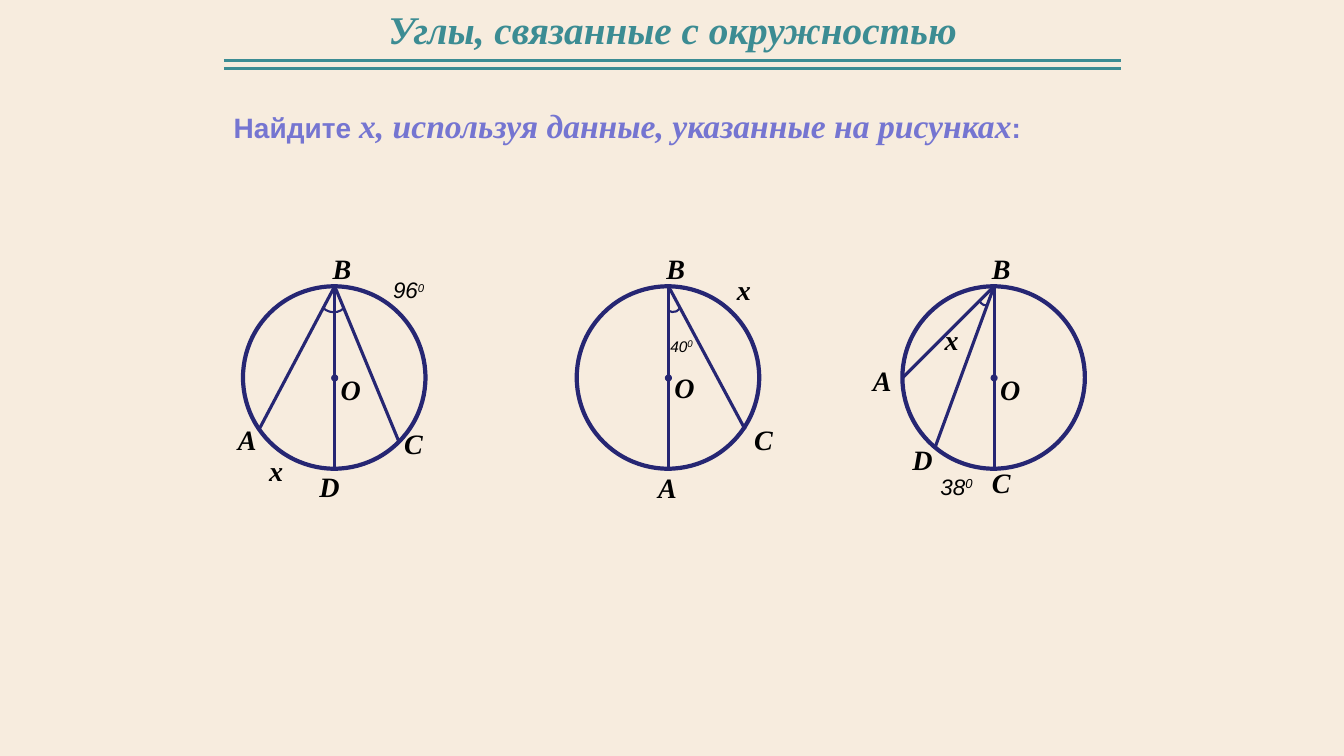
from dataclasses import dataclass

from lxml import etree
from pptx import Presentation
from pptx import util as u
from pptx.dml.color import RGBColor
from pptx.enum import shapes, text
from pptx.oxml import ns

PX = 9144
CIRCLE_TOP, DIAMETER, DOT = 284, 181, 6
APEX = (91, 0)


@dataclass(frozen=True)
class Theme:
    """Colours, fonts and type sizes of the slide."""
    paper: RGBColor = RGBColor(0xF7, 0xEC, 0xDE)
    teal: RGBColor = RGBColor(0x3C, 0x8C, 0x93)
    violet: RGBColor = RGBColor(0x75, 0x75, 0xD1)
    navy: RGBColor = RGBColor(0x26, 0x26, 0x73)
    ink: RGBColor = RGBColor(0, 0, 0)
    serif: str = "Times New Roman"
    sans: str = "Arial"
    title: int = 28
    task: int = 24
    label: int = 20
    degree: int = 16
    small_degree: int = 11


THEME = Theme()


@dataclass(frozen=True)
class Figure:
    """One circle drawing, with offsets from the circle's frame."""
    left: int
    chords: list
    arc: tuple
    turn: float
    labels: list
    degrees: tuple


FIGURES = [
    Figure(241, [(91, 182), (155, 155), (16, 142)], (75, -4, 29, 30), 135.1,
           [("B", 79, -39, 55), ("O", 87, 81, 55), ("A", -15, 130, 55),
            ("x", 16, 161, 32), ("С", 150, 134, 55), ("D", 66, 177, 55)],
           ("96", 139, -15, 37, THEME.degree, 14)),
    Figure(572, [(91, 182), (167, 142)], (87, 9, 16, 17), 124.1,
           [("B", 79, -39, 55), ("O", 87, 79, 55), ("A", 71, 178, 55),
            ("x", 149, -19, 32), ("С", 166, 130, 55)],
           ("40", 83, 44, 30, THEME.small_degree, 12)),
    Figure(895, [(91, 182), (32, 161), (0, 91)], (76, 5, 11, 14), 163.4,
           [("B", 79, -39, 55), ("O", 87, 81, 55), ("A", -39, 72, 55),
            ("x", 32, 31, 32), ("С", 79, 173, 55), ("D", 0, 150, 32)],
           ("38", 28, 180, 37, THEME.degree, THEME.degree)),
]


def px(*lengths):
    """Turn px lengths into EMU."""
    return [length * PX for length in lengths]


def style_font(font, name, size, colour, bold=True, italic=True):
    """Set every visible trait of a font."""
    font.name, font.size = name, u.Pt(size)
    font.bold, font.italic = bold, italic
    font.color.rgb = colour


def add_box(page, left, top, width, height):
    """Add a wrapping text box and return its first paragraph."""
    frame = page.shapes.add_textbox(*px(left, top, width, height)).text_frame
    frame.word_wrap = True
    frame.auto_size = text.MSO_AUTO_SIZE.SHAPE_TO_FIT_TEXT
    return frame.paragraphs[0]


def add_span(para, words):
    """Append a run of text."""
    span = para.add_run()
    span.text = words
    return span


def add_line(page, start, end, colour):
    """Draw a straight line without a shadow."""
    line = page.shapes.add_connector(
        shapes.MSO_CONNECTOR.STRAIGHT, *px(*start, *end))
    line.line.color.rgb = colour
    line.line.width = u.Pt(2.25)
    etree.SubElement(line._element.spPr, ns.qn("a:effectLst"))


def add_outline(parent, kind, frame, weight, filled=False):
    """Draw a navy preset shape, hollow unless filled."""
    shape = parent.shapes.add_shape(kind, *px(*frame))
    shape.shadow.inherit = False
    if filled:
        shape.fill.solid()
        shape.fill.fore_color.rgb = THEME.navy
    else:
        shape.fill.background()
    shape.line.color.rgb = THEME.navy
    shape.line.width = u.Pt(weight)
    return shape


def add_circle(page, left):
    """Draw a circle grouped with its centre dot."""
    group = page.shapes.add_group_shape()
    oval = shapes.MSO_SHAPE.OVAL
    add_outline(group, oval, (left, CIRCLE_TOP, DIAMETER, DIAMETER), 3)
    inset = (DIAMETER + 1 - DOT) // 2
    add_outline(group, oval, (left + inset, CIRCLE_TOP + inset, DOT, DOT),
                0.75, filled=True)


def add_label(page, letter, left, top, width):
    """Write the letter of a point or unknown."""
    para = add_box(page, left, top, width, 44)
    para.space_before = u.Pt(2)
    style_font(para.font, THEME.serif, THEME.label, THEME.ink)
    add_span(para, letter)


def add_degrees(page, value, left, top, height, size, raised_size):
    """Write an angle with a raised zero as its degree sign."""
    para = add_box(page, left, top, 74, height)
    style_font(para.font, THEME.sans, size, THEME.ink, bold=False)
    add_span(para, value)
    zero = add_span(para, "0")
    zero.font.size = u.Pt(raised_size)
    zero.font._element.set("baseline", "30000")


def add_figure(page, figure):
    """Draw one circle with its chords, angle arc and labels."""
    def place(x, y):
        return figure.left + x, CIRCLE_TOP + y

    add_circle(page, figure.left)
    for chord in figure.chords:
        add_line(page, place(*chord), place(*APEX), THEME.navy)
    x, y, width, height = figure.arc
    arc = add_outline(page, shapes.MSO_SHAPE.ARC,
                      (*place(x, y), width, height), 1.5)
    arc.rotation = figure.turn
    for letter, x, y, width in figure.labels:
        add_label(page, letter, *place(x, y), width)
    value, x, y, *sizes = figure.degrees
    add_degrees(page, value, *place(x, y), *sizes)


def add_heading(page):
    """Fill the title and rule a double line beneath it."""
    title = page.shapes.title
    title.left, title.top, title.width, title.height = px(167, 0, 1000, 57)
    frame = title.text_frame
    frame.vertical_anchor = text.MSO_ANCHOR.MIDDLE
    frame.auto_size = text.MSO_AUTO_SIZE.SHAPE_TO_FIT_TEXT
    para = frame.paragraphs[0]
    para.alignment = text.PP_ALIGN.CENTER
    style_font(para.font, THEME.serif, THEME.title, THEME.teal)
    add_span(para, "Углы, связанные с окружностью")
    for top in (60, 68):
        add_line(page, (222, top), (1112, top), THEME.teal)


def add_task(page):
    """Write the task sentence in its two typefaces."""
    para = add_box(page, 222, 99, 890, 51)
    plain = (THEME.sans, THEME.label, THEME.violet, True, False)
    slanted = (THEME.serif, THEME.task, THEME.violet)
    for words, look in (
            ("Найдите ", plain),
            ("x, используя данные, указанные на рисунках", slanted),
            (":", plain)):
        style_font(add_span(para, words).font, *look)


def main():
    """Build the slide and save it."""
    deck = Presentation()
    deck.slide_width, deck.slide_height = px(1333, 750)
    page = deck.slides.add_slide(deck.slide_layouts.get_by_name("Title Only"))
    page.background.fill.solid()
    page.background.fill.fore_color.rgb = THEME.paper
    add_heading(page)
    add_task(page)
    for figure in FIGURES:
        add_figure(page, figure)
    deck.save("out.pptx")


if __name__ == "__main__":
    main()
